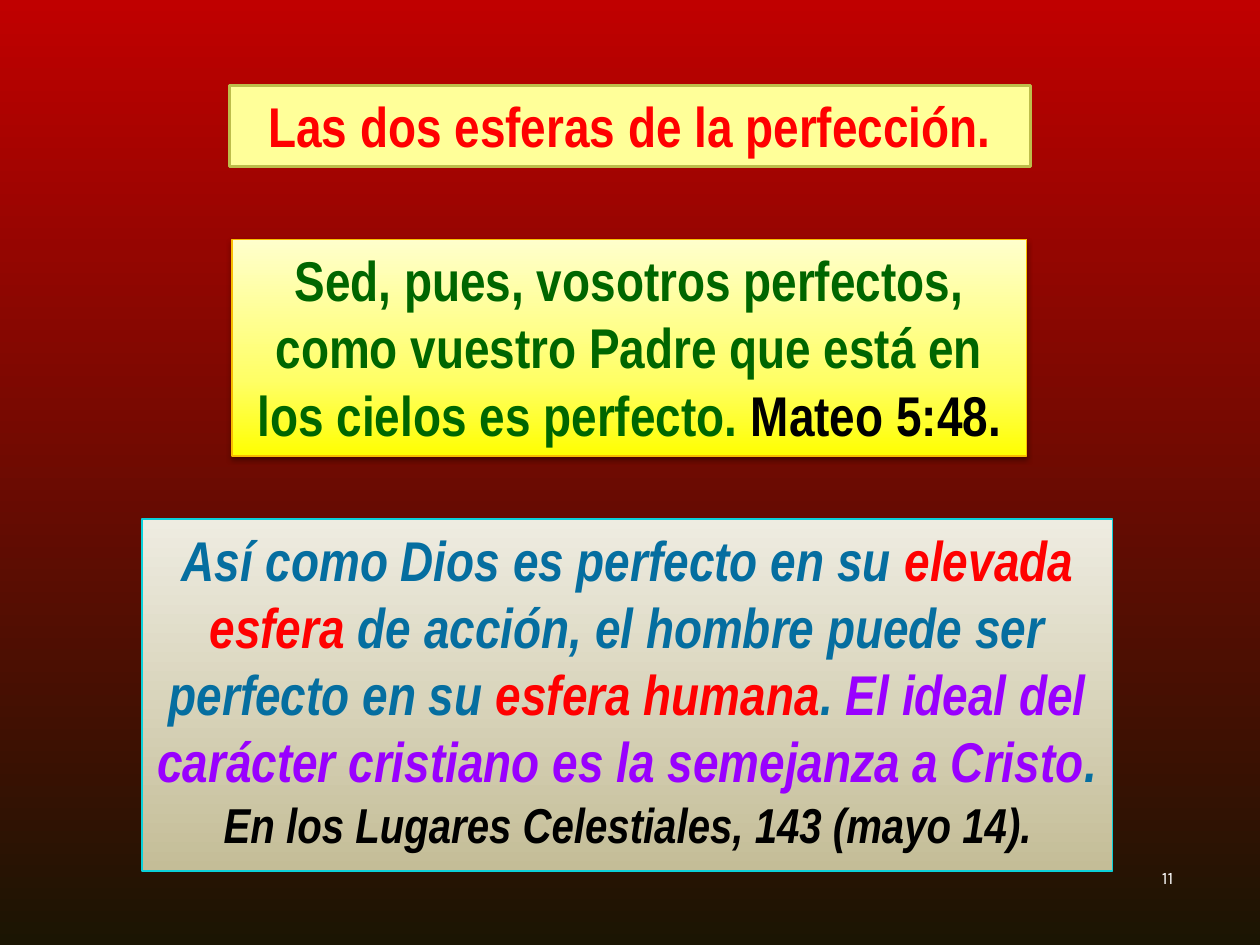
"""Slide on the two spheres of perfection: three framed texts on a red gradient."""
from lxml.etree import SubElement
from pptx import Presentation
from pptx.dml.color import RGBColor
from pptx.enum.shapes import MSO_SHAPE
from pptx.enum.text import MSO_ANCHOR, MSO_AUTO_SIZE, PP_ALIGN
from pptx.oxml.ns import qn
from pptx.util import Inches, Pt

RED = RGBColor(0xFF, 0x00, 0x00)
GREEN = RGBColor(0x00, 0x66, 0x00)
BLUE = RGBColor(0x05, 0x6E, 0xA0)
NAVY = RGBColor(0x00, 0x20, 0x60)
VIOLET = RGBColor(0x99, 0x00, 0xFF)
PLUM = RGBColor(0x66, 0x00, 0x66)
BLACK = RGBColor(0x00, 0x00, 0x00)
WHITE = RGBColor(0xFF, 0xFF, 0xFF)
CREAM = RGBColor(0xFF, 0xFF, 0x99)
OLIVE = RGBColor(0xBD, 0xBD, 0x4B)
GOLD = RGBColor(0xF9, 0xBC, 0x00)
CYAN = RGBColor(0x0B, 0xD0, 0xD9)

BACKDROP = [(0, RGBColor(0xC0, 0x00, 0x00)), (100, RGBColor(0x1B, 0x15, 0x03))]
SAND = [(0, RGBColor(0xEE, 0xEC, 0xE1)), (100, RGBColor(0xC4, 0xBD, 0x97))]
YELLOW = [(0, RGBColor(0xFF, 0xFF, 0xCC)), (65, RGBColor(0xFF, 0xFF, 0x66)),
          (100, RGBColor(0xFF, 0xFF, 0x00))]

OUTLINES = {BLUE: (NAVY, 0.25), VIOLET: (PLUM, 1.5)}

BOXES = [
    {"at": (1.13, 4.12, 7.7, 2.79), "fill": SAND, "line": (CYAN, 1), "italic": True,
     "paragraphs": [
         (32, [("Así como Dios es perfecto en su ", BLUE),
               ("elevada esfera", RED),
               (" de acción, el hombre puede ser perfecto en su ", BLUE),
               ("esfera humana", RED),
               (". ", BLUE),
               ("El ideal del carácter cristiano es la semejanza a Cristo", VIOLET),
               (". ", BLUE)]),
         (28, [("En los Lugares Celestiales, 143 (mayo 14).", BLACK)])]},
    {"at": (1.82, 0.68, 6.36, 0.64), "fill": CREAM, "line": (OLIVE, 1.5),
     "paragraphs": [(32, [("Las dos esferas de la perfección.", RED)])]},
    {"at": (1.84, 1.9, 6.31, 1.72), "fill": YELLOW, "line": (GOLD, 0.75), "shadow": True,
     "paragraphs": [
         (32, [("Sed, pues, vosotros perfectos, como vuestro Padre que está en "
                "los cielos es perfecto. ", GREEN),
               ("Mateo 5:48.", BLACK)])]},
]


def add_color(parent, color):
    return SubElement(parent, qn("a:srgbClr"), val=str(color))


def fill_downward(fill, element, stops):
    fill.gradient()
    fill.gradient_angle = 270
    stop_list = next(element.iter(qn("a:gsLst")))
    for stop in list(stop_list):
        stop_list.remove(stop)
    for share, color in stops:
        add_color(SubElement(stop_list, qn("a:gs"), pos=str(share * 1000)), color)


def add_shadow(sp):
    effects = next(sp.element.iter(qn("a:effectLst")))
    shadow = SubElement(effects, qn("a:outerShdw"), blurRad=str(Pt(3.1)),
                        dist=str(Pt(1.6)), dir="5400000", rotWithShape="0")
    SubElement(add_color(shadow, BLACK), qn("a:alpha"), val="38000")


def add_run(p, text, font, size, color):
    r = p.add_run()
    r.text = text
    r.font.name, r.font.size = font, Pt(size)
    r.font.color.rgb = color
    return r


def outline(r, color, width):
    props = r.font._element
    ln = SubElement(props, qn("a:ln"), w=str(Pt(width)))
    add_color(SubElement(ln, qn("a:solidFill")), color)
    props.insert(0, ln)


def add_box(s, box):
    sp = s.shapes.add_shape(MSO_SHAPE.RECTANGLE, *map(Inches, box["at"]))
    sp.shadow.inherit = False
    if isinstance(box["fill"], list):
        fill_downward(sp.fill, sp.element, box["fill"])
    else:
        sp.fill.solid()
        sp.fill.fore_color.rgb = box["fill"]
    color, width = box["line"]
    sp.line.color.rgb = color
    sp.line.width = Pt(width)
    if box.get("shadow"):
        add_shadow(sp)
    tf = sp.text_frame
    tf.word_wrap = True
    tf.auto_size = MSO_AUTO_SIZE.SHAPE_TO_FIT_TEXT
    tf.vertical_anchor = MSO_ANCHOR.TOP
    for i, (size, runs) in enumerate(box["paragraphs"]):
        p = tf.add_paragraph() if i else tf.paragraphs[0]
        p.alignment = PP_ALIGN.CENTER
        for text, color in runs:
            r = add_run(p, text, "Arial Narrow", size, color)
            r.font.bold = True
            r.font.italic = box.get("italic", False)
            outline(r, *OUTLINES.get(color, (color, 0.25)))


def main():
    prs = Presentation()
    prs.slide_width, prs.slide_height = Inches(10), Inches(7.5)
    s = prs.slides.add_slide(prs.slide_layouts[6])
    fill_downward(s.background.fill, s.element, BACKDROP)

    number = s.shapes.add_textbox(*map(Inches, (7.33, 6.83, 2.08, 0.5)))
    number.text_frame.word_wrap = True
    p = number.text_frame.paragraphs[0]
    p.alignment = PP_ALIGN.RIGHT
    add_run(p, "11", "Karla", 10, WHITE)

    for box in BOXES:
        add_box(s, box)
    prs.save("out.pptx")


if __name__ == "__main__":
    main()
